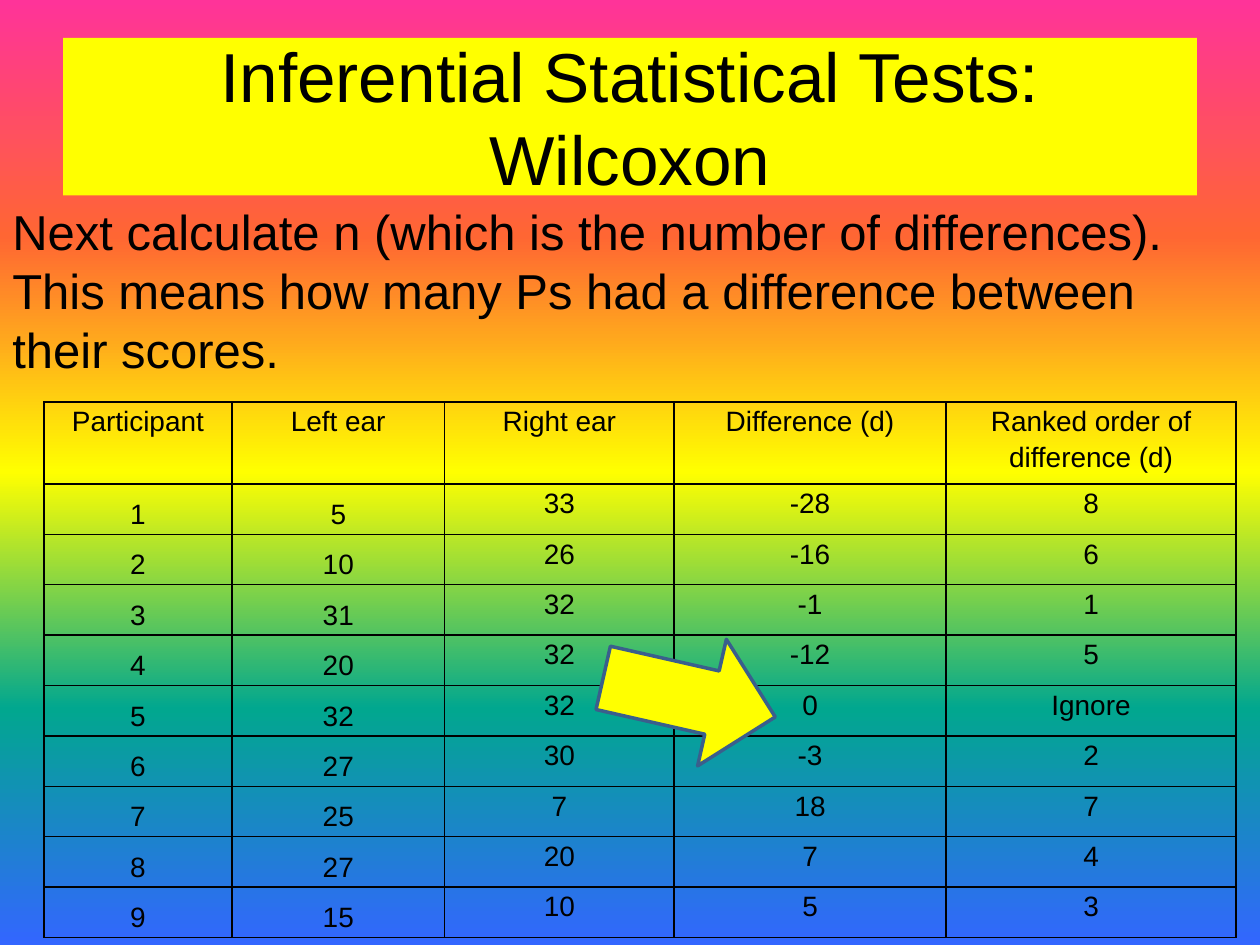
from lxml import etree
from pptx import Presentation
from pptx.dml.color import RGBColor
from pptx.enum.shapes import MSO_SHAPE
from pptx.enum.text import MSO_ANCHOR, MSO_AUTO_SIZE, PP_ALIGN
from pptx.oxml.ns import qn
from pptx.util import Inches, Pt

LEFT, CENTER = PP_ALIGN.LEFT, PP_ALIGN.CENTER
MIDDLE = MSO_ANCHOR.MIDDLE
NO_AUTOFIT = MSO_AUTO_SIZE.NONE
LEFT_ARROW = MSO_SHAPE.LEFT_ARROW
TITLE_ONLY = 5

BLACK, YELLOW, ARROW_BLUE = "000000", "FFFF00", "3A5F8C"
RAINBOW = ["FF3399", "FF6633", "FFFF00", "01A78F", "3366FF"]

COLUMN_WIDTHS = [1.49, 1.69, 1.82, 2.16, 2.3]
HEADER_HEIGHT, ROW_HEIGHT = 0.65, 0.4
HEADERS = ["Participant", "Left ear", "Right ear", "Difference (d)",
           "Ranked order of difference (d)"]
SCORES = [
    (1, 5, 33, -28, 8),
    (2, 10, 26, -16, 6),
    (3, 31, 32, -1, 1),
    (4, 20, 32, -12, 5),
    (5, 32, 32, 0, "Ignore"),
    (6, 27, 30, -3, 2),
    (7, 25, 7, 18, 7),
    (8, 27, 20, 7, 4),
    (9, 15, 10, 5, 3),
]


def color(hex_string):
    return RGBColor.from_string(hex_string)


def add_solid_fill(parent, hex_string):
    fill = etree.SubElement(parent, qn("a:solidFill"))
    etree.SubElement(fill, qn("a:srgbClr"), val=hex_string)


class SlideBuilder:
    font = "Arial"
    text_color = BLACK

    def __init__(self, slide):
        self.slide = slide

    def gradient_background(self, colors):
        """Fill the background from top to bottom with evenly spaced stops."""
        fill = self.slide.background.fill
        fill.gradient()
        fill.gradient_angle = 270
        stops = next(self.slide.element.iter(qn("a:gsLst")))
        for stop in list(stops):
            stops.remove(stop)
        for index, hex_string in enumerate(colors):
            position = index * 100000 // (len(colors) - 1)
            stop = etree.SubElement(stops, qn("a:gs"), pos=str(position))
            etree.SubElement(stop, qn("a:srgbClr"), val=hex_string)

    def add_text(self, frame, text, size, alignment=LEFT, line_spacing=1.0):
        paragraph = frame.paragraphs[0]
        paragraph.alignment = alignment
        paragraph.line_spacing = line_spacing
        run = paragraph.add_run()
        run.text = text
        run.font.name = self.font
        run.font.size = Pt(size)
        run.font.color.rgb = color(self.text_color)

    def title(self, text, left, top, width, height, size, fill):
        shape = self.slide.shapes.title
        shape.left, shape.top = Inches(left), Inches(top)
        shape.width, shape.height = Inches(width), Inches(height)
        shape.fill.solid()
        shape.fill.fore_color.rgb = color(fill)
        frame = shape.text_frame
        frame.word_wrap = True
        frame.auto_size = NO_AUTOFIT
        frame.vertical_anchor = MIDDLE
        self.add_text(frame, text, size, CENTER)

    def text_box(self, text, left, top, width, height, size):
        shape = self.slide.shapes.add_textbox(
            Inches(left), Inches(top), Inches(width), Inches(height))
        shape.text_frame.word_wrap = True
        self.add_text(shape.text_frame, text, size)

    def table(self, rows, left, top, widths, heights, size):
        table = self.slide.shapes.add_table(
            len(rows), len(widths), Inches(left), Inches(top),
            Inches(sum(widths)), Inches(sum(heights))).table
        table.first_row = table.horz_banding = False
        for column, width in zip(table.columns, widths):
            column.width = Inches(width)
        for row, height in zip(table.rows, heights):
            row.height = Inches(height)
        for row_index, values in enumerate(rows):
            for column_index, value in enumerate(values):
                cell = table.cell(row_index, column_index)
                is_loose = row_index > 0 and column_index < 2
                self.format_cell(cell)
                self.add_text(cell.text_frame, str(value), size, CENTER,
                              1.5 if is_loose else 1.15)

    def format_cell(self, cell):
        cell.margin_left = cell.margin_right = Inches(0.07)
        cell.margin_top = cell.margin_bottom = 0
        properties = cell._tc.get_or_add_tcPr()
        for side in "LRTB":
            border = etree.SubElement(properties, qn(f"a:ln{side}"), w=str(Pt(1)))
            add_solid_fill(border, BLACK)
        cell.fill.background()

    def arrow(self, left, top, width, height, rotation, fill, line):
        shape = self.slide.shapes.add_shape(
            LEFT_ARROW, Inches(left), Inches(top), Inches(width), Inches(height))
        shape.rotation = rotation
        shape.shadow.inherit = False
        shape.fill.solid()
        shape.fill.fore_color.rgb = color(fill)
        shape.line.color.rgb = color(line)
        shape.line.width = Pt(2)


def main():
    presentation = Presentation()
    presentation.slide_width, presentation.slide_height = Inches(10), Inches(7.5)
    layout = presentation.slide_layouts[TITLE_ONLY]
    builder = SlideBuilder(presentation.slides.add_slide(layout))

    builder.gradient_background(RAINBOW)
    builder.title("Inferential Statistical Tests: Wilcoxon",
                  0.5, 0.3, 9, 1.25, 39.6, YELLOW)
    builder.text_box(
        "Next calculate n (which is the number of differences). This means "
        "how many Ps had a difference between their scores.",
        0, 1.55, 9.59, 1.51, 28)
    builder.table([HEADERS] + SCORES, 0.35, 3.19, COLUMN_WIDTHS,
                  [HEADER_HEIGHT] + [ROW_HEIGHT] * len(SCORES), 16)
    builder.arrow(4.77, 5.02, 1.4, 1.03, 192.8, YELLOW, ARROW_BLUE)
    presentation.save("out.pptx")


if __name__ == "__main__":
    main()
